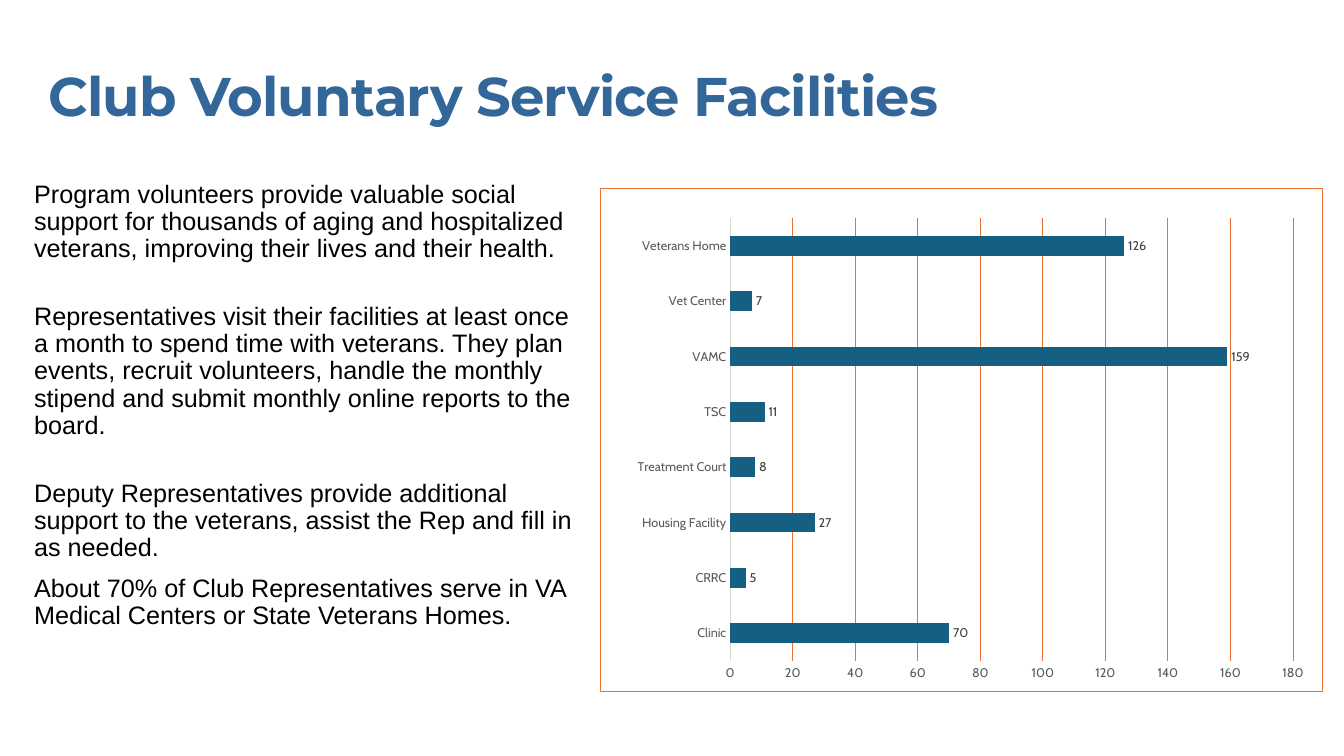
import pptx
import pptx.chart.data
import pptx.dml.color
import pptx.enum.chart
import pptx.oxml
import pptx.oxml.ns
import pptx.util

Pt = pptx.util.Pt

FACILITIES = {
    "Clinic": 70,
    "CRRC": 5,
    "Housing Facility": 27,
    "Treatment Court": 8,
    "TSC": 11,
    "VAMC": 159,
    "Vet Center": 7,
    "Veterans Home": 126,
}

BODY = [
    ("Program volunteers provide valuable social support for thousands of aging "
     "and hospitalized veterans, improving their lives and their health.", 0),
    ("Representatives visit their facilities at least once a month to spend time "
     "with veterans. They plan events, recruit volunteers, handle the monthly "
     "stipend and submit monthly online reports to the board.", 29),
    ("Deputy Representatives provide additional support to the veterans, assist "
     "the Rep and fill in as needed.", 29),
    ("About 70% of Club Representatives serve in VA Medical Centers or State "
     "Veterans Homes.", 10),
]


def rgb(hex_code):
    return pptx.dml.color.RGBColor.from_string(hex_code)


def style_font(font, name, size, color, bold=False):
    font.name = name
    font.size = Pt(size)
    font.bold = bold
    font.color.rgb = rgb(color)


def style_line(line, color):
    line.color.rgb = rgb(color)
    line.width = Pt(0.75)


def add_title(slide, left, top, width, height):
    frame = slide.shapes.add_textbox(Pt(left), Pt(top), Pt(width), Pt(height)).text_frame
    frame.word_wrap = True
    heading = frame.paragraphs[0]
    heading.line_spacing = 0.9
    heading.space_after = Pt(6)
    words = heading.add_run()
    words.text = "Club Voluntary Service Facilities"
    words.font._element.set("spc", "-60")
    style_font(heading.font, "Montserrat", 38.9, "336699", True)


def add_body(slide, left, top, width, height):
    frame = slide.shapes.add_textbox(Pt(left), Pt(top), Pt(width), Pt(height)).text_frame
    frame.word_wrap = True
    for index, (words, gap) in enumerate(BODY):
        paragraph = frame.add_paragraph() if index else frame.paragraphs[0]
        paragraph.text = words
        paragraph.line_spacing = 0.9
        paragraph.space_before = Pt(gap)
        style_font(paragraph.font, "Arial", 18, "000000")


def frame_chart(chart, color):
    border = pptx.oxml.parse_xml(
        f'<c:spPr {pptx.oxml.ns.nsdecls("c", "a")}><a:noFill/><a:ln w="{Pt(0.75)}">'
        f'<a:solidFill><a:srgbClr val="{color}"/></a:solidFill></a:ln></c:spPr>')
    chart._chartSpace.chart.addnext(border)


def place_plot(chart, x, y, w, h):
    plot_area = chart._chartSpace.chart.plotArea
    for automatic in plot_area.findall(pptx.oxml.ns.qn("c:layout")):
        plot_area.remove(automatic)
    plot_area.insert(0, pptx.oxml.parse_xml(
        f'<c:layout {pptx.oxml.ns.nsdecls("c")}><c:manualLayout>'
        '<c:layoutTarget val="inner"/><c:xMode val="edge"/><c:yMode val="edge"/>'
        f'<c:x val="{x}"/><c:y val="{y}"/><c:w val="{w}"/><c:h val="{h}"/>'
        '</c:manualLayout></c:layout>'))


def add_facility_chart(slide, left, top, width, height):
    counts = pptx.chart.data.CategoryChartData()
    counts.categories = list(FACILITIES)
    counts.add_series("Series 1", list(FACILITIES.values()))
    chart = slide.shapes.add_chart(
        pptx.enum.chart.XL_CHART_TYPE.BAR_CLUSTERED,
        Pt(left), Pt(top), Pt(width), Pt(height), counts).chart
    chart.has_legend = False
    chart.has_title = False
    style_font(chart.font, "Cabin", 10, "000000")
    frame_chart(chart, "E97132")
    place_plot(chart, 0.18, 0.06, 0.78, 0.88)

    for axis in (chart.category_axis, chart.value_axis):
        axis.major_tick_mark = pptx.enum.chart.XL_TICK_MARK.NONE
        axis.minor_tick_mark = pptx.enum.chart.XL_TICK_MARK.NONE
        style_font(axis.tick_labels.font, "Cabin", 9, "595959")
    style_line(chart.category_axis.format.line, "D9D9D9")
    scale = chart.value_axis
    scale.format.line.fill.background()
    scale.minimum_scale, scale.maximum_scale, scale.major_unit = 0, 180, 20
    scale.has_major_gridlines = True
    style_line(scale.major_gridlines.format.line, "E97132")

    bars = chart.plots[0]
    bars.gap_width = 182
    bars.vary_by_categories = False
    bars.series[0].format.fill.solid()
    bars.series[0].format.fill.fore_color.rgb = rgb("156082")
    bars.has_data_labels = True
    bars.data_labels.show_value = True
    bars.data_labels.position = pptx.enum.chart.XL_LABEL_POSITION.OUTSIDE_END
    style_font(bars.data_labels.font, "Cabin", 9, "404040")


def main():
    deck = pptx.Presentation()
    deck.slide_width = Pt(960)
    deck.slide_height = Pt(540)
    slide = deck.slides.add_slide(deck.slide_layouts[6])
    add_title(slide, 27.4, 46, 728.6, 80)
    add_body(slide, 17.3, 126, 406, 399)
    add_facility_chart(slide, 428.4, 134, 516.3, 360)
    deck.save("out.pptx")


if __name__ == "__main__":
    main()
